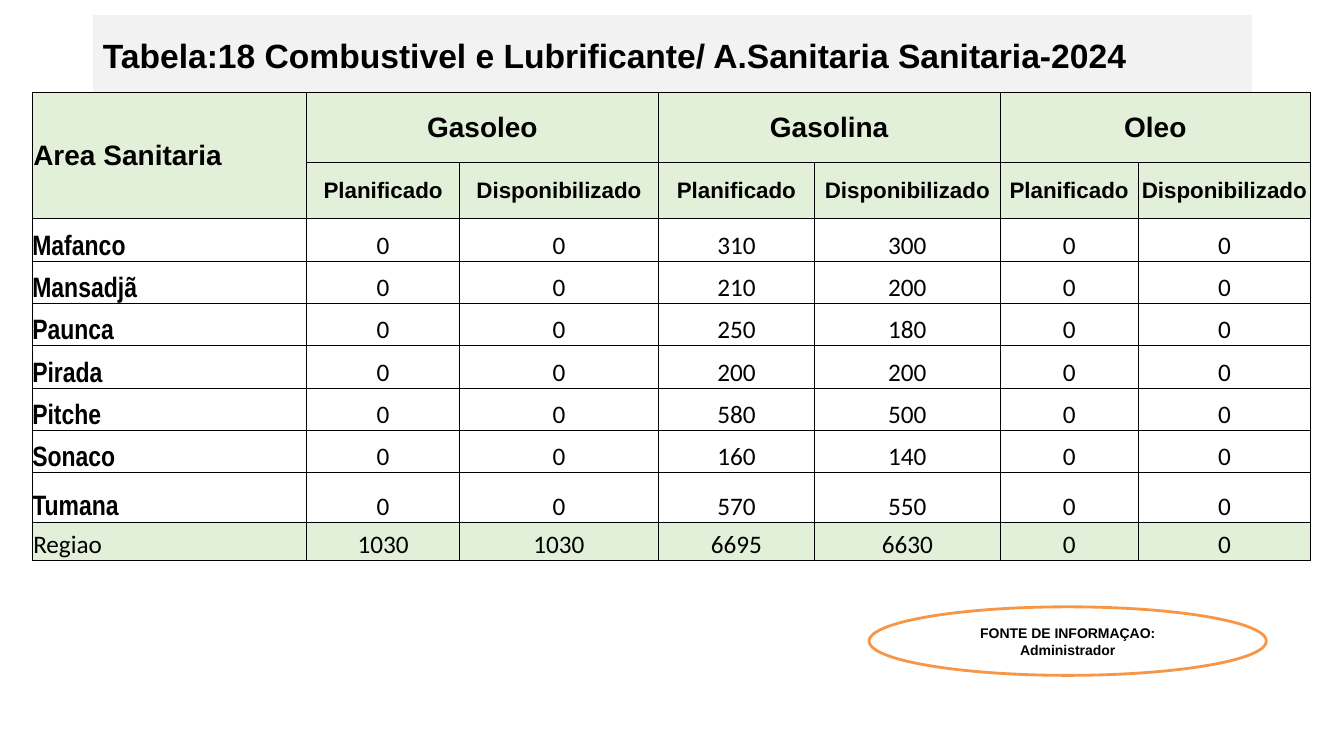
import pptx
import pptx.util
import pptx.oxml
import pptx.oxml.ns
import pptx.dml.color
import pptx.enum.shapes
import pptx.enum.text

Inches, Pt = pptx.util.Inches, pptx.util.Pt
Align, Anchor = pptx.enum.text.PP_ALIGN, pptx.enum.text.MSO_ANCHOR

TITLE = "Tabela:18 Combustivel e Lubrificante/ A.Sanitaria Sanitaria-2024"
SOURCE = "FONTE DE INFORMAÇAO: Administrador"
FUELS = ["Gasoleo", "Gasolina", "Oleo"]
AREAS = [
    ("Mafanco", 0, 0, 310, 300, 0, 0),
    ("Mansadjã", 0, 0, 210, 200, 0, 0),
    ("Paunca", 0, 0, 250, 180, 0, 0),
    ("Pirada", 0, 0, 200, 200, 0, 0),
    ("Pitche", 0, 0, 580, 500, 0, 0),
    ("Sonaco", 0, 0, 160, 140, 0, 0),
    ("Tumana", 0, 0, 570, 550, 0, 0),
]
TOTAL = ("Regiao", 1030, 1030, 6695, 6630, 0, 0)
ROWS = [
    ["Area Sanitaria"] + [text for fuel in FUELS for text in (fuel, "")],
    [""] + ["Planificado", "Disponibilizado"] * len(FUELS),
    *AREAS,
    TOTAL,
]
WIDTHS = [2.72, 1.52, 1.97, 1.55, 1.84, 1.37, 1.71]
HEIGHTS = [0.69, 0.56] + [0.42] * 6 + [0.49, 0.38]

COLORS = {"text": "000000", "band": "F2F2F2", "green": "E2F0D9",
          "white": "FFFFFF", "orange": "F79646"}
FONTS = {
    "title": {"name": "Arial", "size": Pt(24), "bold": True},
    "head": {"name": "Arial", "size": Pt(20), "bold": True},
    "sub": {"name": "Arial", "size": Pt(16), "bold": True},
    "area": {"name": "Arial Narrow", "size": Pt(20), "bold": True},
    "value": {"name": "Calibri", "size": Pt(18), "bold": False},
    "source": {"name": "Arial", "size": Pt(10), "bold": True},
}
PADS = {"margin_left": 0.01, "margin_right": 0.01,
        "margin_top": 0.01, "margin_bottom": 0}


def color(name):
    return pptx.dml.color.RGBColor.from_string(COLORS[name])


def paint(fill, name):
    fill.solid()
    fill.fore_color.rgb = color(name)


def write(frame, text, style, align):
    para = frame.paragraphs[0]
    para.alignment = align
    run = para.add_run()
    run.text = str(text)
    for key, value in FONTS[style].items():
        setattr(run.font, key, value)
    run.font.color.rgb = color("text")
    return para


def border(cell):
    props = cell._tc.get_or_add_tcPr()
    for side in ("lnL", "lnR", "lnT", "lnB"):
        props.append(pptx.oxml.parse_xml(
            f'<a:{side} {pptx.oxml.ns.nsdecls("a")} w="{Pt(0.5)}"><a:solidFill>'
            f'<a:srgbClr val="{COLORS["text"]}"/></a:solidFill></a:{side}>'))


def pick(row, col):
    """Return the font style of a table cell."""
    if row == 0 or (row == 1 and col == 0):
        return "head"
    if row == 1:
        return "sub"
    return "area" if col == 0 and row < len(ROWS) - 1 else "value"


def add_title(slide):
    title = slide.shapes.title
    title.left, title.top = Inches(0.92), Inches(0.15)
    title.width, title.height = Inches(11.5), Inches(0.84)
    paint(title.fill, "band")
    title.text_frame.vertical_anchor = Anchor.MIDDLE
    para = write(title.text_frame, TITLE, "title", Align.LEFT)
    para.line_spacing = 0.9


def add_grid(slide):
    frame = slide.shapes.add_table(
        len(ROWS), len(WIDTHS), Inches(0.32), Inches(0.92),
        Inches(sum(WIDTHS)), Inches(sum(HEIGHTS)))
    table = frame.table
    table.first_row = table.horz_banding = False
    for column, width in zip(table.columns, WIDTHS):
        column.width = Inches(width)
    for line, height in zip(table.rows, HEIGHTS):
        line.height = Inches(height)
    table.cell(0, 0).merge(table.cell(1, 0))
    for col in range(1, len(WIDTHS), 2):
        table.cell(0, col).merge(table.cell(0, col + 1))

    for row, texts in enumerate(ROWS):
        for col, text in enumerate(texts):
            cell = table.cell(row, col)
            style = pick(row, col)
            border(cell)
            if row < 2 or row == len(ROWS) - 1:
                paint(cell.fill, "green")
            else:
                cell.fill.background()
            for key, pad in PADS.items():
                setattr(cell, key, Inches(0 if style == "area" else pad))
            cell.vertical_anchor = Anchor.MIDDLE if row < 2 else Anchor.BOTTOM
            if text != "":
                align = Align.CENTER if col else Align.LEFT
                write(cell.text_frame, text, style, align)


def add_source(slide):
    oval = slide.shapes.add_shape(
        pptx.enum.shapes.MSO_SHAPE.OVAL,
        Inches(8.62), Inches(6.02), Inches(3.94), Inches(0.68))
    oval.shadow.inherit = False
    paint(oval.fill, "white")
    oval.line.color.rgb = color("orange")
    oval.line.width = Pt(2)
    oval.text_frame.word_wrap = True
    oval.text_frame.vertical_anchor = Anchor.MIDDLE
    write(oval.text_frame, SOURCE, "source", Align.CENTER)


def main():
    deck = pptx.Presentation()
    deck.slide_width, deck.slide_height = Inches(13.33), Inches(7.5)
    slide = deck.slides.add_slide(deck.slide_layouts.get_by_name("Title Only"))
    add_title(slide)
    add_grid(slide)
    add_source(slide)
    deck.save("out.pptx")


if __name__ == "__main__":
    main()
